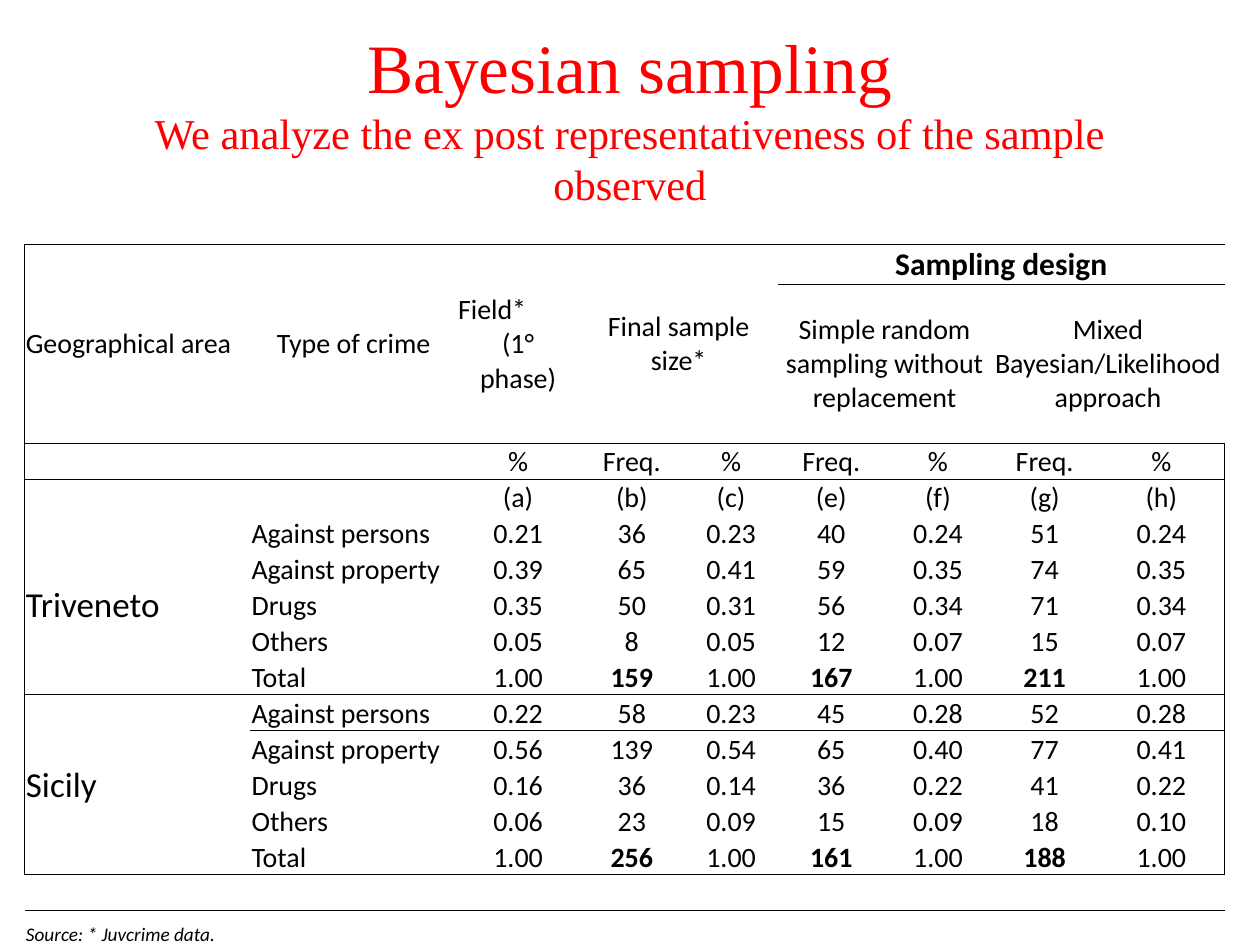
import lxml.etree
import pptx
import pptx.dml.color
import pptx.enum.text
import pptx.oxml.ns
import pptx.util

Pt = pptx.util.Pt
ALIGN = pptx.enum.text.PP_ALIGN
ANCHOR = pptx.enum.text.MSO_ANCHOR

# Content
TITLE = "Bayesian sampling"
SUBTITLE = "We analyze the ex post representativeness of the sample observed"
SOURCE = "Source: * Juvcrime data."
# row, column, row span, column span, text
HEADERS = [
    (0, 0, 2, 1, "Geographical area"),
    (0, 1, 2, 1, "Type of crime"),
    (0, 2, 2, 1, "Field*\n(1°\vphase)"),
    (0, 3, 2, 2, "Final sample size*"),
    (0, 5, 1, 4, "Sampling design"),
    (1, 5, 1, 2, "Simple random sampling without replacement"),
    (1, 7, 1, 2, "Mixed Bayesian/Likelihood approach"),
]
MEASURES = [
    ["%", "Freq.", "%", "Freq.", "%", "Freq.", "%"],
    ["(a)", "(b)", "(c)", "(e)", "(f)", "(g)", "(h)"],
]
CRIMES = ["Against persons", "Against property", "Drugs", "Others", "Total"]
AREAS = {
    "Triveneto": [
        ["0.21", "36", "0.23", "40", "0.24", "51", "0.24"],
        ["0.39", "65", "0.41", "59", "0.35", "74", "0.35"],
        ["0.35", "50", "0.31", "56", "0.34", "71", "0.34"],
        ["0.05", "8", "0.05", "12", "0.07", "15", "0.07"],
        ["1.00", "159", "1.00", "167", "1.00", "211", "1.00"],
    ],
    "Sicily": [
        ["0.22", "58", "0.23", "45", "0.28", "52", "0.28"],
        ["0.56", "139", "0.54", "65", "0.40", "77", "0.41"],
        ["0.16", "36", "0.14", "36", "0.22", "41", "0.22"],
        ["0.06", "23", "0.09", "15", "0.09", "18", "0.10"],
        ["1.00", "256", "1.00", "161", "1.00", "188", "1.00"],
    ],
}

# Theme and layout, in points
THEME = {
    "title_font": "Times New Roman", "table_font": "Calibri",
    "title_color": "FF0000", "text_color": "000000",
    "title": 39.6, "subtitle": 24.3, "body": 16, "design": 18,
    "area": 20, "source": 11, "border": 0.5,
}
NO_STYLE = "{2D5ABB26-0587-4C30-8999-92F81FD0307C}"
TABLE_LEFT, TABLE_TOP = 14.1, 139.5
COLUMN_WIDTHS = [129, 118, 70, 60, 53.5, 61, 61, 61, 72.4]
ROW_HEIGHTS = [22.8, 90.9] + [20.57] * 14
FIRST_AREA_ROW = 4
LAST_ROW = len(ROW_HEIGHTS) - 1
FRAME_END = LAST_ROW - 2
LAST_COLUMN = len(COLUMN_WIDTHS) - 1
RULED_ROWS = {1, FIRST_AREA_ROW + len(CRIMES) - 1, FRAME_END}


def add_run(paragraph, text, size, font, color, bold=False, italic=False):
    run = paragraph.add_run()
    run.text = text
    run.font.size, run.font.name = Pt(size), font
    run.font.bold, run.font.italic = bold, italic
    run.font.color.rgb = pptx.dml.color.RGBColor.from_string(color)


def write_cell(cell, text, size=THEME["body"], align=ALIGN.CENTER,
               anchor=ANCHOR.BOTTOM, bold=False, italic=False):
    cell.vertical_anchor = anchor
    for index, block in enumerate(text.split("\n")):
        frame = cell.text_frame
        paragraph = frame.add_paragraph() if index else frame.paragraphs[0]
        paragraph.alignment = align
        for number, line in enumerate(block.split("\v")):
            if number:
                paragraph.add_line_break()
            add_run(paragraph, line, size, THEME["table_font"],
                    THEME["text_color"], bold, italic)


def ruled_below(row, column):
    return row in RULED_ROWS or (row == 0 and column >= 5)


def draw_borders(cell, row, column):
    framed = row <= FRAME_END
    sides = {
        "L": framed and column == 0,
        "R": framed and column == LAST_COLUMN,
        "T": row == 0 or ruled_below(row - 1, column),
        "B": ruled_below(row, column),
    }
    qualify = pptx.oxml.ns.qn
    properties = cell._tc.get_or_add_tcPr()
    for side, shown in sides.items():
        if shown:
            line = lxml.etree.SubElement(properties, qualify("a:ln" + side),
                                         w=str(int(Pt(THEME["border"]))))
            fill = lxml.etree.SubElement(line, qualify("a:solidFill"))
            lxml.etree.SubElement(fill, qualify("a:srgbClr"), val=THEME["text_color"])


def add_title(slide):
    box = slide.shapes.add_textbox(Pt(36), Pt(21.6), Pt(648), Pt(90))
    frame = box.text_frame
    frame.word_wrap = True
    frame.vertical_anchor = ANCHOR.MIDDLE
    paragraph = frame.paragraphs[0]
    paragraph.alignment = ALIGN.CENTER
    style = THEME["title_font"], THEME["title_color"]
    add_run(paragraph, TITLE, THEME["title"], *style)
    paragraph.add_line_break()
    add_run(paragraph, SUBTITLE, THEME["subtitle"], *style)


def add_empty_table(slide):
    graphic = slide.shapes.add_table(
        len(ROW_HEIGHTS), len(COLUMN_WIDTHS), Pt(TABLE_LEFT), Pt(TABLE_TOP),
        Pt(sum(COLUMN_WIDTHS)), Pt(sum(ROW_HEIGHTS)))
    table = graphic.table
    table.first_row = table.horz_banding = False
    table._tbl.tblPr.find(pptx.oxml.ns.qn("a:tableStyleId")).text = NO_STYLE
    for column, width in zip(table.columns, COLUMN_WIDTHS):
        column.width = Pt(width)
    for row, height in enumerate(ROW_HEIGHTS):
        table.rows[row].height = Pt(height)
        for column in range(len(COLUMN_WIDTHS)):
            cell = table.cell(row, column)
            cell.margin_left = cell.margin_right = cell.margin_top = Pt(0.72)
            cell.margin_bottom = 0
            draw_borders(cell, row, column)
            cell.fill.background()
            # Keeps empty cells as low as the filled ones
            ending = cell.text_frame.paragraphs[0]._p.get_or_add_endParaRPr()
            ending.set("sz", str(THEME["body"] * 100))
    return table


def fill_table(table):
    # Headings
    for row, column, height, width, text in HEADERS:
        cell = table.cell(row, column)
        cell.merge(table.cell(row + height - 1, column + width - 1))
        design = text == "Sampling design"
        write_cell(cell, text, THEME["design" if design else "body"],
                   ALIGN.LEFT if column == 0 else ALIGN.CENTER,
                   ANCHOR.BOTTOM if design else ANCHOR.MIDDLE, design)
    field = table.cell(0, 2).text_frame.paragraphs
    field[0].alignment = ALIGN.LEFT
    for row, labels in enumerate(MEASURES, start=2):
        for column, label in enumerate(labels, start=2):
            write_cell(table.cell(row, column), label)

    # Areas
    for index, (area, records) in enumerate(AREAS.items()):
        top = FIRST_AREA_ROW + index * len(CRIMES)
        cell = table.cell(top, 0)
        cell.merge(table.cell(top + len(CRIMES) - 1, 0))
        write_cell(cell, area, THEME["area"], ALIGN.LEFT, ANCHOR.MIDDLE)
        for row, (crime, values) in enumerate(zip(CRIMES, records), start=top):
            write_cell(table.cell(row, 1), crime, align=ALIGN.LEFT)
            for column, value in enumerate(values):
                frequency = MEASURES[0][column] == "Freq."
                write_cell(table.cell(row, column + 2), value,
                           bold=crime == "Total" and frequency)

    # Source line
    cell = table.cell(LAST_ROW, 0)
    cell.merge(table.cell(LAST_ROW, 3))
    write_cell(cell, SOURCE, THEME["source"], ALIGN.LEFT, italic=True)


def main():
    presentation = pptx.Presentation()
    presentation.slide_width, presentation.slide_height = Pt(720), Pt(540)
    slide = presentation.slides.add_slide(presentation.slide_layouts[6])
    add_title(slide)
    fill_table(add_empty_table(slide))
    presentation.save("out.pptx")


if __name__ == "__main__":
    main()
